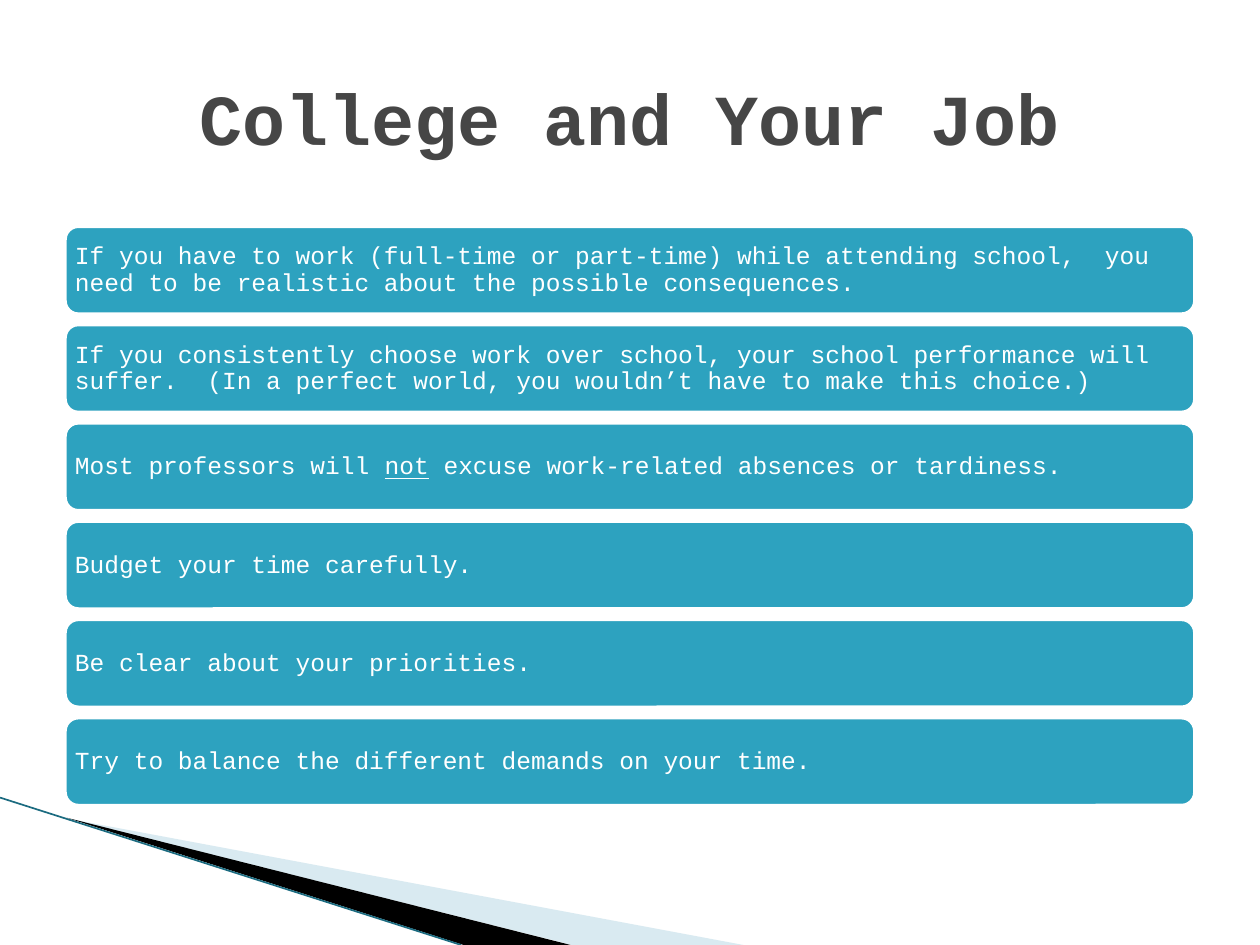
from dataclasses import dataclass

from lxml.etree import SubElement
from pptx import Presentation
from pptx.dml.color import RGBColor
from pptx.enum.shapes import MSO_CONNECTOR, MSO_SHAPE
from pptx.enum.text import MSO_ANCHOR, PP_ALIGN
from pptx.oxml.ns import qn
from pptx.util import Inches, Pt

TITLE = "College and Your Job"
ADVICE = [
    ["If you have to work (full-time or part-time) while attending school,  you need to be realistic about the possible consequences."],
    ["If you consistently choose work over school, your school performance will suffer.  (In a perfect world, you wouldn’t have to make this choice.)"],
    ["Most professors will ", "not", " excuse work-related absences or tardiness."],
    ["Budget your time carefully."],
    ["Be clear about your priorities."],
    ["Try to balance the different demands on your time."],
]


@dataclass(frozen=True)
class Theme:
    font: str = "Courier New"
    title_size: float = 41
    body_size: float = 14
    title: str = "464646"
    card: str = "2DA2BF"
    white: str = "FFFFFF"
    pale: str = "A0CBDC"
    black: str = "000000"
    edge: str = "1B6B80"


THEME = Theme()
WIDTH, HEIGHT = 10, 7.5
MARGIN = WIDTH * 0.05
CONTENT_WIDTH = WIDTH - 2 * MARGIN
TITLE_TOP, TITLE_HEIGHT = 0.3, 1.25
CARDS_TOP, CARD_HEIGHT, ROW_PITCH = 1.78, 0.73, 0.78
CARD_INSET = 0.06

WEDGES = [
    ([(0.55, 6.5), (5.9, HEIGHT), (4.54, HEIGHT)], THEME.pale, 40),
    ([(0.53, 6.49), (4.53, HEIGHT), (3.68, HEIGHT)], THEME.black, 100),
]
EDGE_START, EDGE_END = (0, 6.33), (3.66, HEIGHT)


def color(value):
    return RGBColor.from_string(value)


def format_run(run, size, value, bold=False, underline=False):
    run.font.name = THEME.font
    run.font.size = Pt(size)
    run.font.color.rgb = color(value)
    run.font.bold = bold
    run.font.underline = underline


def add_wedge(slide, points, fill, opacity):
    corners = [(Inches(x), Inches(y)) for x, y in points]
    builder = slide.shapes.build_freeform(*corners[0])
    builder.add_line_segments(corners[1:], close=True)
    shape = builder.convert_to_shape()
    shape.shadow.inherit = False
    shape.line.fill.background()
    shape.fill.solid()
    shape.fill.fore_color.rgb = color(fill)
    if opacity < 100:
        fill_color = shape.fill._xPr.find(qn("a:solidFill"))[0]
        SubElement(fill_color, qn("a:alpha"), val=str(opacity * 1000))


def add_edge(slide):
    ends = [Inches(value) for value in EDGE_START + EDGE_END]
    connector = slide.shapes.add_connector(MSO_CONNECTOR.STRAIGHT, *ends)
    connector.line.color.rgb = color(THEME.edge)
    connector.line.width = Pt(0.95)
    SubElement(connector._element.spPr, qn("a:effectLst"))


def add_title(slide):
    title = slide.shapes.title
    title.left, title.top = Inches(MARGIN), Inches(TITLE_TOP)
    title.width, title.height = Inches(CONTENT_WIDTH), Inches(TITLE_HEIGHT)
    title.text_frame.text = TITLE
    title.text_frame.vertical_anchor = MSO_ANCHOR.MIDDLE
    paragraph = title.text_frame.paragraphs[0]
    paragraph.alignment = PP_ALIGN.CENTER
    format_run(paragraph.runs[0], THEME.title_size, THEME.title, bold=True)


def add_card(slide, row, pieces):
    shape = slide.shapes.add_shape(
        MSO_SHAPE.ROUNDED_RECTANGLE,
        Inches(MARGIN), Inches(CARDS_TOP + row * ROW_PITCH),
        Inches(CONTENT_WIDTH), Inches(CARD_HEIGHT),
    )
    shape.shadow.inherit = False
    shape.fill.solid()
    shape.fill.fore_color.rgb = color(THEME.card)
    shape.line.color.rgb = color(THEME.white)
    shape.line.width = Pt(4.33)
    frame = shape.text_frame
    frame.word_wrap = True
    frame.vertical_anchor = MSO_ANCHOR.MIDDLE
    frame.margin_left = frame.margin_right = Inches(CARD_INSET)
    frame.margin_top = frame.margin_bottom = Inches(CARD_INSET)
    paragraph = frame.paragraphs[0]
    paragraph.alignment = PP_ALIGN.LEFT
    paragraph.line_spacing = 0.9
    for index, piece in enumerate(pieces):
        run = paragraph.add_run()
        run.text = piece
        format_run(run, THEME.body_size, THEME.white, underline=index % 2 == 1)


def main():
    presentation = Presentation()
    presentation.slide_width = Inches(WIDTH)
    presentation.slide_height = Inches(HEIGHT)
    slide = presentation.slides.add_slide(presentation.slide_layouts.get_by_name("Title Only"))
    for points, fill, opacity in WEDGES:
        add_wedge(slide, points, fill, opacity)
    add_edge(slide)
    add_title(slide)
    for row, pieces in enumerate(ADVICE):
        add_card(slide, row, pieces)
    presentation.save("out.pptx")


if __name__ == "__main__":
    main()
